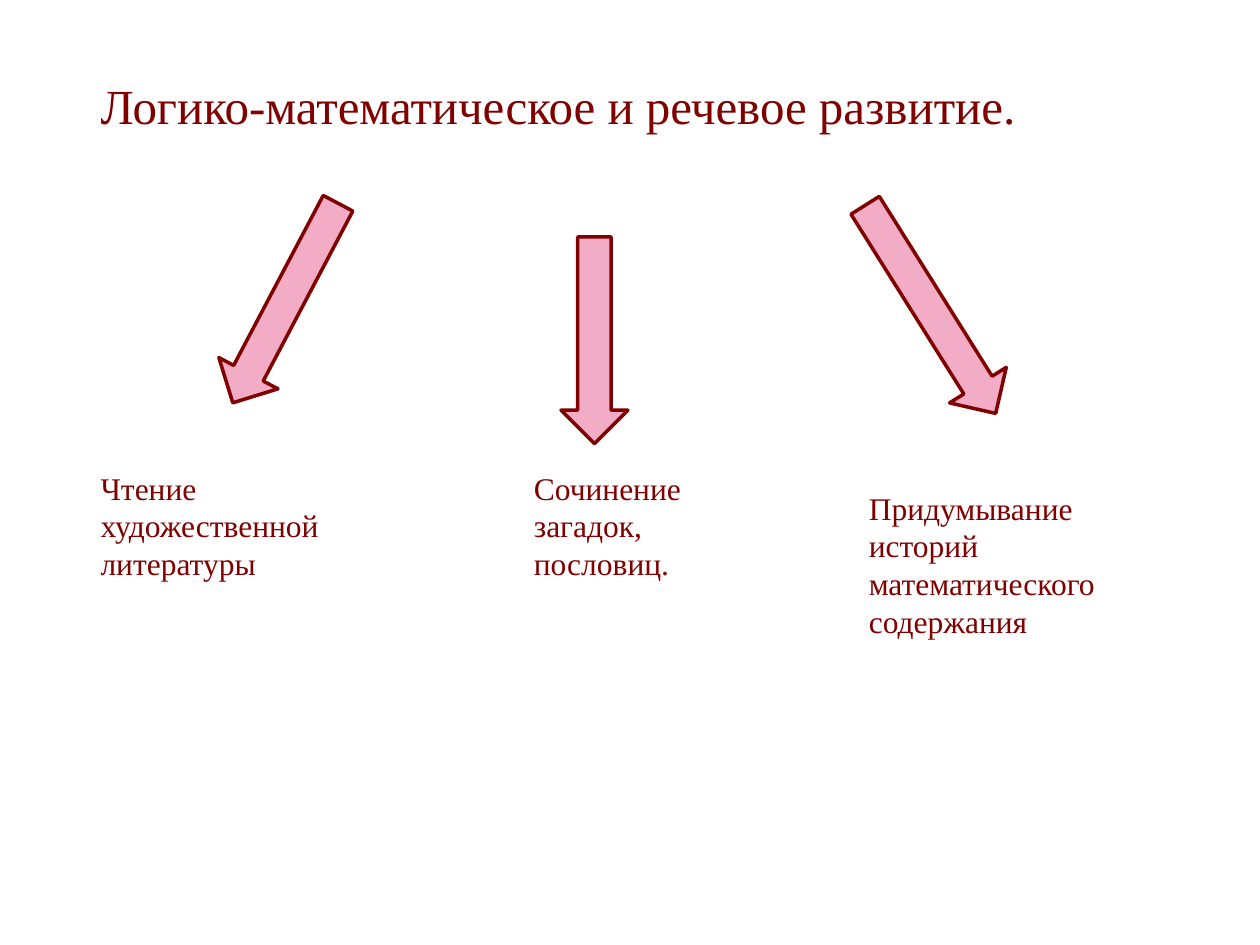
from pptx import Presentation
from pptx.dml.color import RGBColor
from pptx.enum.shapes import MSO_SHAPE
from pptx.enum.text import MSO_AUTO_SIZE
from pptx.util import Pt

COLORS = {"dark": "800000", "pink": "F2ACC5"}
FONT = "Times New Roman"
ARROW_WIDTH = 38.2

prs = Presentation()
prs.slide_width, prs.slide_height = Pt(720), Pt(540)
s = prs.slides.add_slide(prs.slide_layouts[6])
dark = RGBColor.from_string(COLORS["dark"])
pink = RGBColor.from_string(COLORS["pink"])

# Heading and the three activities: left, top, width, height, size, text
texts = [
    (50.4, 39.6, 624.2, 41, 28, "Логико-математическое и речевое развитие."),
    (50.4, 264.2, 163.4, 72.7, 18, "Чтение художественной литературы"),
    (298, 264.2, 129.6, 72.7, 18, "Сочинение загадок, пословиц."),
    (489.4, 275.6, 168.5, 94.3, 18,
     "Придумывание историй математического содержания"),
]
for left, top, width, height, size, text in texts:
    sp = s.shapes.add_textbox(Pt(left), Pt(top), Pt(width), Pt(height))
    tf = sp.text_frame
    tf.word_wrap = True
    tf.auto_size = MSO_AUTO_SIZE.SHAPE_TO_FIT_TEXT
    r = tf.paragraphs[0].add_run()
    r.text = text
    r.font.name = FONT
    r.font.size = Pt(size)
    r.font.color.rgb = dark

# Arrows from the heading to the activities: left, top, height, rotation
arrows = [
    (144, 108.7, 128.9, 27.8),
    (320.6, 135.4, 118.1, 0),
    (512.6, 106.6, 140.4, 327.9),
]
for left, top, height, rotation in arrows:
    sp = s.shapes.add_shape(MSO_SHAPE.DOWN_ARROW, Pt(left), Pt(top),
                            Pt(ARROW_WIDTH), Pt(height))
    sp.rotation = rotation
    sp.shadow.inherit = False
    sp.fill.solid()
    sp.fill.fore_color.rgb = pink
    sp.line.color.rgb = dark
    sp.line.width = Pt(2)

prs.save("out.pptx")
